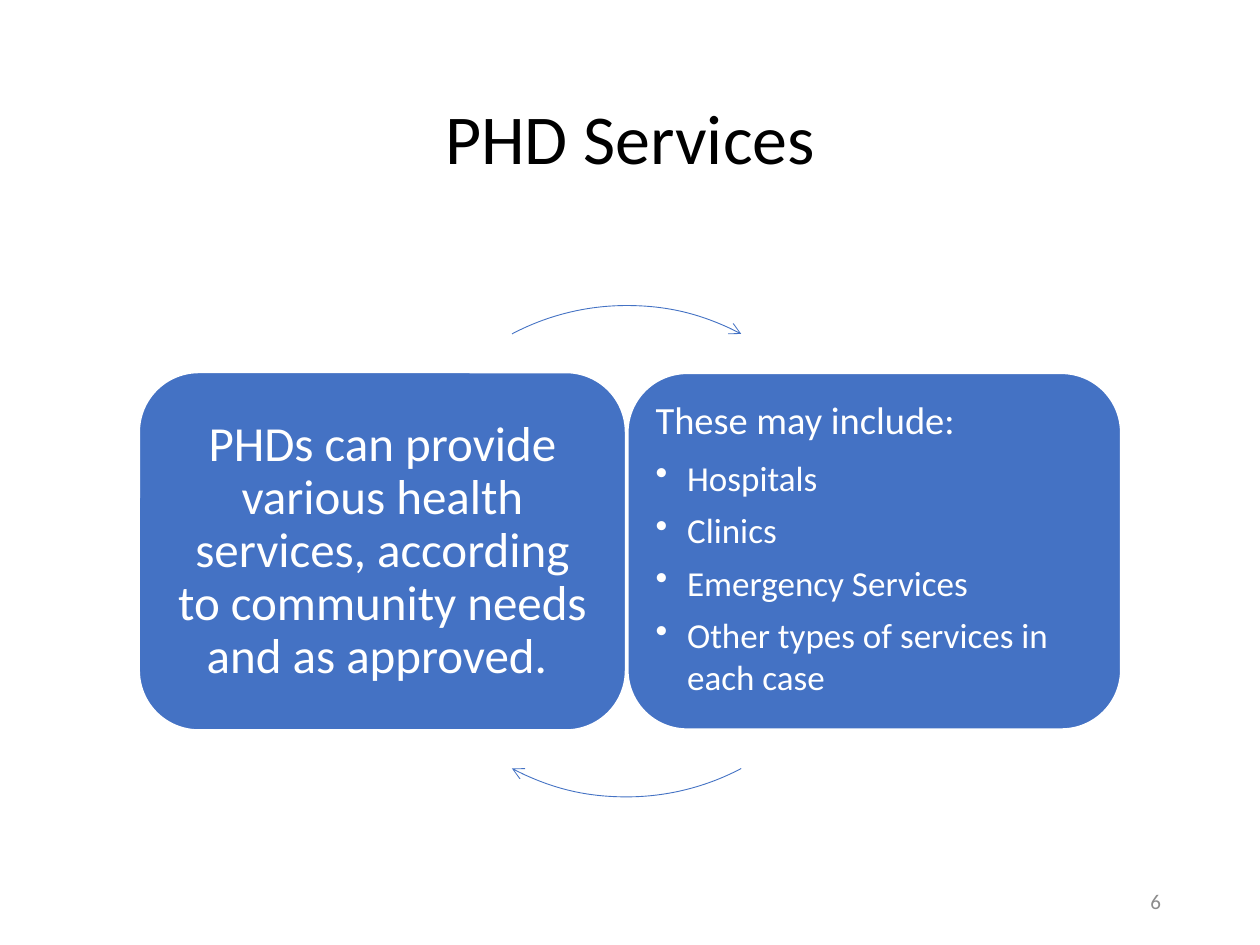
import math
from dataclasses import dataclass

import pptx
import pptx.dml.color
import pptx.enum.shapes
import pptx.enum.text
import pptx.oxml
import pptx.oxml.ns
import pptx.util

Pt = pptx.util.Pt
ALIGN = pptx.enum.text.PP_ALIGN
ANCHOR = pptx.enum.text.MSO_ANCHOR
SHAPE = pptx.enum.shapes.MSO_SHAPE


@dataclass(frozen=True)
class Theme:
    font: str = "Calibri"
    black: str = "000000"
    white: str = "FFFFFF"
    blue: str = "4472C4"
    grey: str = "8C8C8C"
    title: int = 40
    statement: int = 28
    lead: int = 22
    item: int = 20
    number: int = 12


THEME = Theme()
STATEMENT = ("PHDs can provide various health services, according to "
             "community needs and as approved. ")
LEAD = "These may include:"
SERVICES = ["Hospitals", "Clinics", "Emergency Services",
            "Other types of services in each case"]


def colour(code):
    return pptx.dml.color.RGBColor.from_string(code)


def place(item, box):
    for name, value in zip(("left", "top", "width", "height"), box):
        setattr(item, name, Pt(value))


def set_frame(frame, inset, anchor):
    values = {"word_wrap": True, "vertical_anchor": anchor,
              "auto_size": pptx.enum.text.MSO_AUTO_SIZE.NONE}
    values.update({f"margin_{side}": Pt(inset)
                   for side in ("left", "top", "right", "bottom")})
    for name, value in values.items():
        setattr(frame, name, value)


def write(para, text, size, code, **layout):
    for name, value in layout.items():
        setattr(para, name, value)
    span = para.add_run()
    span.text = text
    for name, value in {"name": THEME.font, "size": Pt(size), "bold": False}.items():
        setattr(span.font, name, value)
    span.font.color.rgb = colour(code)


def add_bullet(para, indent):
    properties = para._p.get_or_add_pPr()
    properties.set("marL", str(Pt(indent)))
    properties.set("indent", str(-Pt(indent)))
    bullet = pptx.oxml.parse_xml(
        f'<a:buChar {pptx.oxml.ns.nsdecls("a")} char="•"/>')
    properties.append(bullet)


def add_title(page, box):
    title = page.shapes.title
    place(title, box)
    set_frame(title.text_frame, 4, ANCHOR.MIDDLE)
    write(title.text_frame.paragraphs[0], "PHD Services", THEME.title,
          THEME.black, alignment=ALIGN.CENTER, line_spacing=0.9)


def add_panel(group, box, inset, anchor):
    panel = group.shapes.add_shape(SHAPE.ROUNDED_RECTANGLE, *map(Pt, box))
    panel.shadow.inherit = False
    panel.fill.solid()
    panel.fill.fore_color.rgb = colour(THEME.blue)
    panel.line.color.rgb = colour(THEME.white)
    panel.line.width = Pt(1)
    set_frame(panel.text_frame, inset, anchor)
    return panel.text_frame


def add_statement(group, box):
    frame = add_panel(group, box, 8.8, ANCHOR.MIDDLE)
    write(frame.paragraphs[0], STATEMENT, THEME.statement, THEME.white,
          alignment=ALIGN.CENTER, line_spacing=0.9)


def add_services(group, box):
    frame = add_panel(group, box, 6, ANCHOR.TOP)
    write(frame.paragraphs[0], LEAD, THEME.lead, THEME.white,
          alignment=ALIGN.LEFT, line_spacing=0.9, space_after=Pt(7.7))
    for service in SERVICES:
        para = frame.add_paragraph()
        add_bullet(para, 18)
        write(para, service, THEME.item, THEME.white, level=1,
              alignment=ALIGN.LEFT, space_after=Pt(6))


def add_cycle_arrow(group, box, middle, sweep):
    """Draw a clockwise arc centred on the angle `middle`, in degrees."""
    arc = group.shapes.add_shape(SHAPE.ARC, *map(Pt, box))
    # Angles are stored in 60000ths of a degree, adjustments in 100000ths
    for index, angle in enumerate((middle - sweep / 2, middle + sweep / 2)):
        arc.adjustments[index] = angle * 0.6
    arc.shadow.inherit = False
    arc.fill.background()
    arc.line.color.rgb = colour(THEME.blue)
    arc.line.width = Pt(0.5)
    arc.line._get_or_add_ln().append(pptx.oxml.parse_xml(
        f'<a:tailEnd {pptx.oxml.ns.nsdecls("a")} type="arrow"/>'))


def add_cycle(page, box):
    left, top, width, height = box
    group = page.shapes.add_group_shape()
    gap = 1.2
    first_width = 278
    diameter = 280.8
    # Circle sits on the gap between the panels
    circle = (left + first_width + gap / 2 - diameter / 2,
              top + (height - diameter) / 2, diameter, diameter)
    sweep = 2 * math.degrees(math.asin(131 / diameter))
    add_statement(group, (left, top, first_width, height))
    add_cycle_arrow(group, circle, 270, sweep)
    add_services(group, (left + first_width + gap, top + 0.5,
                         width - first_width - gap, height - 1))
    add_cycle_arrow(group, circle, 90, sweep)


def add_page_number(page, box):
    number = page.shapes.add_textbox(*map(Pt, box))
    set_frame(number.text_frame, 7.2, ANCHOR.MIDDLE)
    write(number.text_frame.paragraphs[0], "6", THEME.number, THEME.grey,
          alignment=ALIGN.RIGHT)


def main():
    deck = pptx.Presentation()
    deck.slide_width, deck.slide_height = Pt(720), Pt(540)
    page = deck.slides.add_slide(deck.slide_layouts[5])
    page.background.fill.solid()
    page.background.fill.fore_color.rgb = colour(THEME.white)
    add_title(page, (49.5, 28.8, 621, 104.4))
    add_cycle(page, (79.5, 212.8, 561, 204.4))
    add_page_number(page, (508.5, 500.5, 162, 28.8))
    deck.save("out.pptx")


if __name__ == "__main__":
    main()
